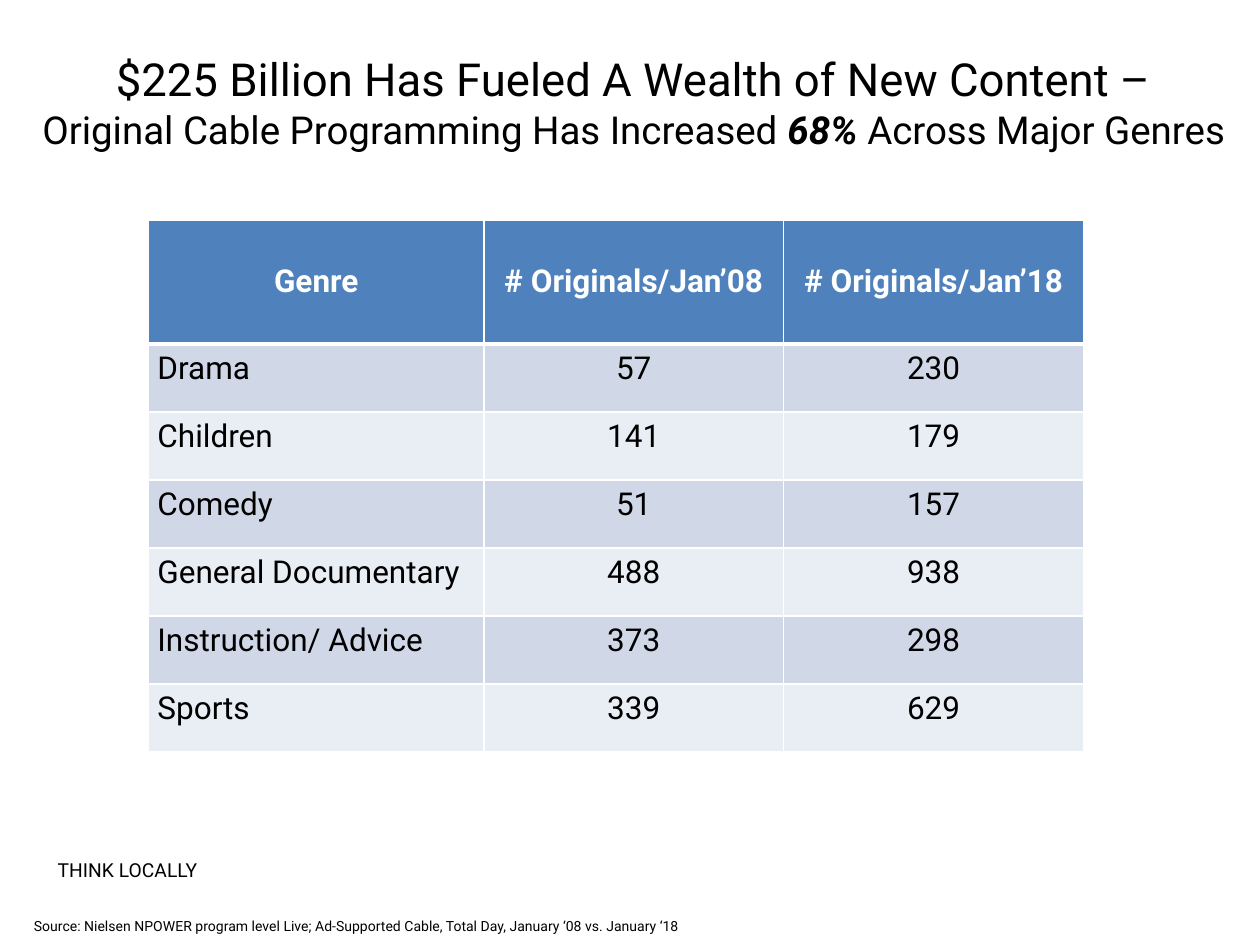
"""Build a slide with a table of original cable programmes by genre."""
from lxml import etree
from pptx import Presentation
from pptx.dml.color import RGBColor
from pptx.enum.text import MSO_ANCHOR, MSO_AUTO_SIZE, PP_ALIGN
from pptx.oxml.ns import qn
from pptx.util import Inches, Pt

LEFT, CENTER = PP_ALIGN.LEFT, PP_ALIGN.CENTER
TOP, MIDDLE = MSO_ANCHOR.TOP, MSO_ANCHOR.MIDDLE
NO_AUTOFIT = MSO_AUTO_SIZE.NONE

COLORS = {
    "text": "000000",
    "white": "FFFFFF",
    "header": "4F81BD",
    "odd": "D0D8E8",
    "even": "E9EDF4",
}
FONT = "Roboto"
TITLE = [
    [("$225 Billion Has Fueled A Wealth of New Content –", {"size": 26})],
    [
        ("Original Cable Programming Has Increased ", {"size": 22}),
        ("68%", {"size": 22, "bold": True, "italic": True}),
        (" Across Major Genres", {"size": 22}),
    ],
]
NOTES = [
    ("Source: Nielsen NPOWER program level Live; Ad-Supported Cable, Total Day, "
     "January ‘08 vs. January ‘18", 8, (0.17, 7.23, 5.88, 0.24)),
    ("THINK LOCALLY", 11, (0.36, 6.76, 1.88, 0.47)),
]
ROWS = [
    ("Genre", "# Originals/Jan’08", "# Originals/Jan’18"),
    ("Drama", 57, 230),
    ("Children", 141, 179),
    ("Comedy", 51, 157),
    ("General Documentary", 488, 938),
    ("Instruction/ Advice", 373, 298),
    ("Sports", 339, 629),
]
COLUMN_WIDTHS = [2.66, 2.38, 2.38]
HEADER_HEIGHT, ROW_HEIGHT = 0.98, 0.54
TABLE_LEFT, TABLE_TOP = 1.18, 1.75


def add_run(paragraph, text, size, color="text", **styles):
    run = paragraph.add_run()
    run.text = text
    run.font.color.rgb = RGBColor.from_string(COLORS[color])
    for name, value in {"name": FONT, "size": Pt(size), **styles}.items():
        setattr(run.font, name, value)


def add_border(cell, side, points):
    line = etree.SubElement(cell._tc.get_or_add_tcPr(), qn(f"a:ln{side}"), w=str(Pt(points)))
    fill = etree.SubElement(line, qn("a:solidFill"))
    etree.SubElement(fill, qn("a:srgbClr"), val=COLORS["white"])


presentation = Presentation()
presentation.slide_width, presentation.slide_height = Inches(10), Inches(7.5)
slide = presentation.slides.add_slide(presentation.slide_layouts[5])

title = slide.shapes.title
title.left, title.top, title.width, title.height = map(Inches, (0.15, 0.53, 9.76, 0.55))
title_frame = title.text_frame
for name, value in {"auto_size": NO_AUTOFIT, "vertical_anchor": MIDDLE, "word_wrap": True}.items():
    setattr(title_frame, name, value)
for index, runs in enumerate(TITLE):
    paragraph = title_frame.add_paragraph() if index else title_frame.paragraphs[0]
    paragraph.alignment = CENTER
    for text, styles in runs:
        add_run(paragraph, text, **styles)

for text, size, box in NOTES:
    text_frame = slide.shapes.add_textbox(*map(Inches, box)).text_frame
    text_frame.word_wrap = True
    add_run(text_frame.paragraphs[0], text, size)

row_heights = [HEADER_HEIGHT] + [ROW_HEIGHT] * (len(ROWS) - 1)
table = slide.shapes.add_table(
    len(ROWS), len(COLUMN_WIDTHS), Inches(TABLE_LEFT), Inches(TABLE_TOP),
    Inches(sum(COLUMN_WIDTHS)), Inches(sum(row_heights)),
).table
for column, width in zip(table.columns, COLUMN_WIDTHS):
    column.width = Inches(width)
for row, height in zip(table.rows, row_heights):
    row.height = Inches(height)

for row_index, values in enumerate(ROWS):
    is_header = row_index == 0
    fill_name = "header" if is_header else ("even", "odd")[row_index % 2]
    for column_index, value in enumerate(values):
        cell = table.cell(row_index, column_index)
        cell_format = {
            "margin_left": Inches(0.07),
            "margin_right": Inches(0.07),
            "margin_top": Inches(0.05),
            "margin_bottom": Inches(0.05),
            "vertical_anchor": MIDDLE if is_header else TOP,
        }
        for name, setting in cell_format.items():
            setattr(cell, name, setting)
        for side in "LRTB":
            thick = (side == "B" and is_header) or (side == "T" and row_index == 1)
            add_border(cell, side, 3 if thick else 1)
        cell.fill.solid()
        cell.fill.fore_color.rgb = RGBColor.from_string(COLORS[fill_name])
        paragraph = cell.text_frame.paragraphs[0]
        paragraph.alignment = CENTER if is_header or column_index else LEFT
        add_run(paragraph, str(value), 18, "white" if is_header else "text", bold=is_header)

presentation.save("out.pptx")
